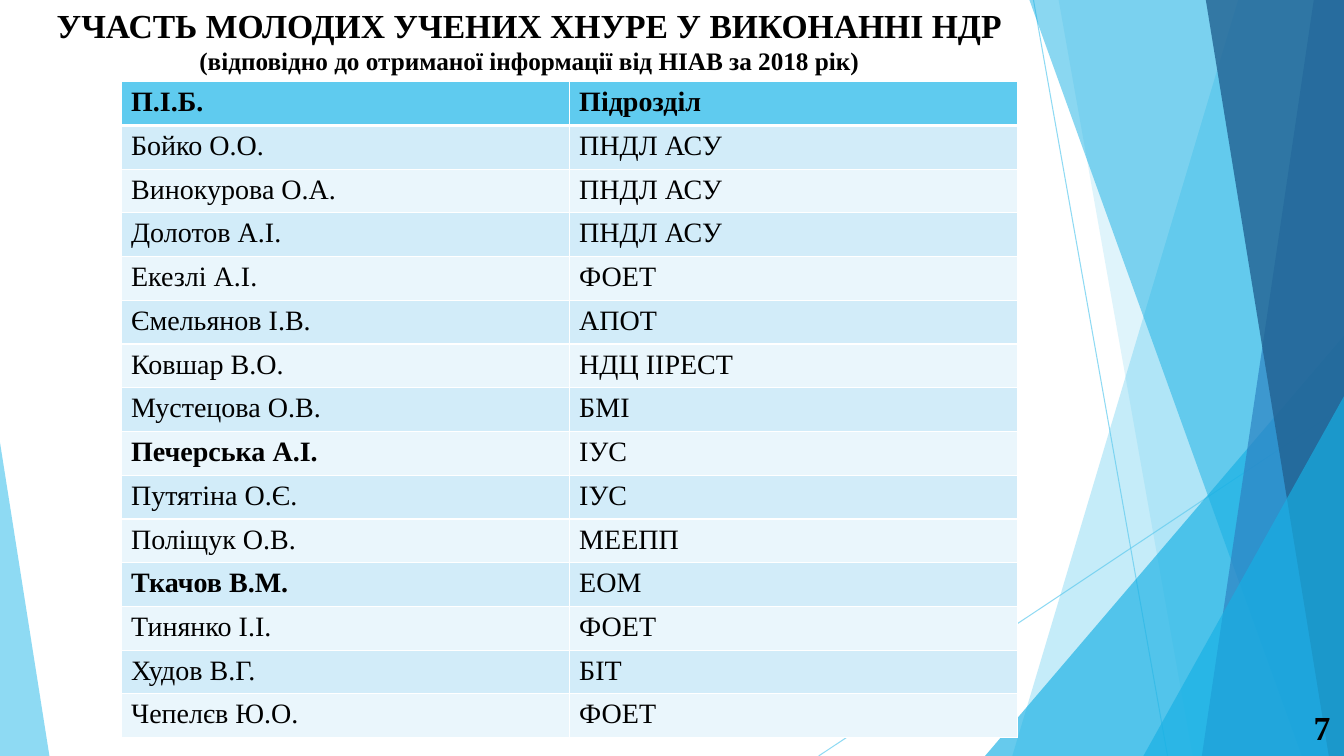
from collections import namedtuple

from lxml.etree import SubElement
from pptx import Presentation
from pptx.dml.color import RGBColor
from pptx.enum.shapes import MSO_CONNECTOR, MSO_SHAPE
from pptx.enum.text import MSO_AUTO_SIZE, PP_ALIGN
from pptx.oxml.ns import qn
from pptx.util import Inches, Pt

Box = namedtuple("Box", "left top width height")

BLACK = RGBColor(0x00, 0x00, 0x00)
WHITE = RGBColor(0xFF, 0xFF, 0xFF)
SKY = RGBColor(0x5F, 0xCB, 0xEF)
CYAN = RGBColor(0x17, 0xB0, 0xE4)
BLUE = RGBColor(0x2E, 0x83, 0xC3)
NAVY = RGBColor(0x22, 0x62, 0x92)
BAND_DARK = RGBColor(0xD2, 0xEC, 0xF9)
BAND_LIGHT = RGBColor(0xEA, 0xF6, 0xFC)
FONT = "Times New Roman"

SLIDE = Box(0, 0, 13.33, 7.5)
TITLE = Box(0.42, 0, 9.66, 0.81)
TABLE = Box(1.2, 0.81, 8.89, 6.5)
NUMBER = Box(12.93, 6.96, 0.37, 0.5)

RAYS = [((10.25, 0), (11.58, 7.5)), ((13.33, 4.03), (8.12, 7.5))]
FACETS = [
    ("band", 12.28, 10.04, SKY, 36),
    ("band", 10.5, 11.83, SKY, 20),
    ("triangle", Box(9.77, 3.33, 3.56, 4.17), 1, CYAN, 66),
    ("band", 10.21, 12.91, CYAN, 50),
    ("band", 13.03, 11.92, BLUE, 70),
    ("band", 11.96, 13.18, NAVY, 80),
    ("triangle", Box(11.34, 3.93, 1.99, 3.57), 1, CYAN, 66),
    ("triangle", Box(0, 4.39, 0.49, 3.11), 0, SKY, 70),
]

HEADER = ("П.І.Б.", "Підрозділ")
MEMBERS = [
    ("Бойко О.О.", "ПНДЛ АСУ"),
    ("Винокурова О.А.", "ПНДЛ АСУ"),
    ("Долотов А.І.", "ПНДЛ АСУ"),
    ("Екезлі А.І.", "ФОЕТ"),
    ("Ємельянов І.В.", "АПОТ"),
    ("Ковшар В.О.", "НДЦ ІІРЕСТ"),
    ("Мустецова О.В.", "БМІ"),
    ("Печерська А.І.", "ІУС"),
    ("Путятіна О.Є.", "ІУС"),
    ("Поліщук О.В.", "МЕЕПП"),
    ("Ткачов В.М.", "ЕОМ"),
    ("Тинянко І.І.", "ФОЕТ"),
    ("Худов В.Г.", "БІТ"),
    ("Чепелєв Ю.О.", "ФОЕТ"),
]
HIGHLIGHTED = {"Печерська А.І.", "Ткачов В.М."}


def emu(values):
    """Turn lengths in inches into slide units."""
    return [Inches(value) for value in values]


def set_alpha(fill_parent, percent):
    """Make the solid fill under an element partly transparent."""
    color = fill_parent.find(qn("a:solidFill"))[0]
    SubElement(color, qn("a:alpha"), val=str(percent * 1000))


def style_font(font, size, bold):
    """Apply the slide's typeface in black."""
    font.name = FONT
    font.size = Pt(size)
    font.bold = bold
    font.color.rgb = BLACK


def add_ray(page, start, end):
    """Draw one thin line of the backdrop."""
    ray = page.shapes.add_connector(MSO_CONNECTOR.STRAIGHT, *emu(start + end))
    ray.line.color.rgb = SKY
    ray.line.width = Pt(0.75)
    properties = ray._element.spPr
    set_alpha(properties.find(qn("a:ln")), 70)
    SubElement(properties, qn("a:effectLst"))


def add_band(page, box, top_x, bottom_x):
    """Outline a full-height band reaching the right edge of the box."""
    right, bottom = box.left + box.width, box.top + box.height
    corners = [(right, box.top), (right, bottom), (bottom_x, bottom)]
    builder = page.shapes.build_freeform(*emu((top_x, box.top)), scale=1)
    builder.add_line_segments([emu(corner) for corner in corners], close=True)
    return builder.convert_to_shape()


def add_triangle(page, box, apex):
    """Add a triangle whose apex is a share of its width."""
    triangle = page.shapes.add_shape(MSO_SHAPE.ISOSCELES_TRIANGLE, *emu(box))
    triangle.adjustments[0] = apex
    return triangle


def add_backdrop(page, box):
    """Layer the rays and translucent facets."""
    for start, end in RAYS:
        add_ray(page, start, end)
    for kind, first, second, color, opacity in FACETS:
        if kind == "band":
            facet = add_band(page, box, first, second)
        else:
            facet = add_triangle(page, first, second)
        facet.shadow.inherit = False
        facet.line.fill.background()
        facet.fill.solid()
        facet.fill.fore_color.rgb = color
        set_alpha(facet._element.spPr, opacity)


def add_text(page, box, lines, align):
    """Write bold (text, size) lines in an unwrapped box."""
    frame = page.shapes.add_textbox(*emu(box)).text_frame
    frame.word_wrap = False
    frame.auto_size = MSO_AUTO_SIZE.SHAPE_TO_FIT_TEXT
    for index, (text, size) in enumerate(lines):
        para = frame.add_paragraph() if index else frame.paragraphs[0]
        para.text = text
        para.alignment = align
        style_font(para.font, size, True)


def set_borders(cell, widths):
    """Give a cell white borders, with widths keyed by side."""
    properties = cell._tc.get_or_add_tcPr()
    for index, (side, width) in enumerate(widths.items()):
        line = SubElement(properties, qn(f"a:ln{side}"), w=str(Pt(width)))
        fill = SubElement(line, qn("a:solidFill"))
        SubElement(fill, qn("a:srgbClr"), val=str(WHITE))
        properties.insert(index, line)


def add_members_table(page, box):
    """Fill the table of people and their departments."""
    rows = [HEADER] + MEMBERS
    table = page.shapes.add_table(len(rows), len(HEADER), *emu(box)).table
    for column in table.columns:
        column.width = Inches(box.width / len(HEADER))
    for row_index, values in enumerate(rows):
        table.rows[row_index].height = Inches(box.height / len(rows))
        is_header = row_index == 0
        band = BAND_DARK if row_index % 2 else BAND_LIGHT
        for column_index, text in enumerate(values):
            cell = table.cell(row_index, column_index)
            cell.fill.solid()
            cell.fill.fore_color.rgb = SKY if is_header else band
            top, bottom = 3 if row_index == 1 else 1, 3 if is_header else 1
            set_borders(cell, {"L": 1, "R": 1, "T": top, "B": bottom})
            para = cell.text_frame.paragraphs[0]
            para.text = text
            style_font(para.font, 20, is_header or text in HIGHLIGHTED)


def main():
    """Build the deck and save it."""
    deck = Presentation()
    deck.slide_width, deck.slide_height = emu((SLIDE.width, SLIDE.height))
    page = deck.slides.add_slide(deck.slide_layouts[6])
    add_backdrop(page, SLIDE)
    title_lines = [
        ("УЧАСТЬ МОЛОДИХ УЧЕНИХ ХНУРЕ У ВИКОНАННІ НДР", 24),
        ("(відповідно до отриманої інформації від НІАВ за 2018 рік)", 18),
    ]
    add_text(page, TITLE, title_lines, PP_ALIGN.CENTER)
    add_members_table(page, TABLE)
    add_text(page, NUMBER, [("7", 24)], PP_ALIGN.LEFT)
    deck.save("out.pptx")


if __name__ == "__main__":
    main()
